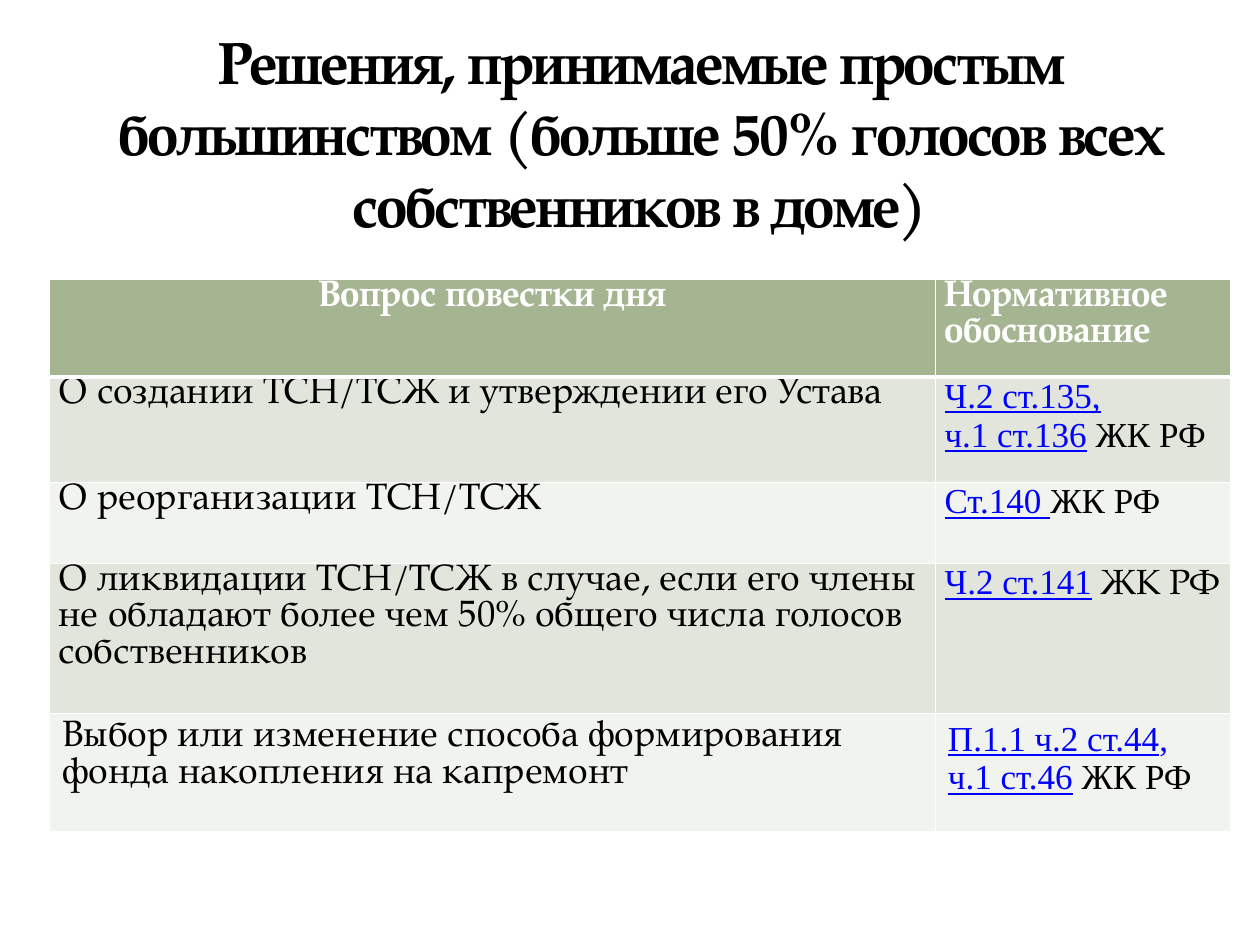
from lxml import etree
from pptx import Presentation
from pptx.dml.color import RGBColor
from pptx.enum.text import MSO_ANCHOR, MSO_AUTO_SIZE, PP_ALIGN
from pptx.oxml.ns import qn
from pptx.util import Cm, Pt

LEFT, CENTER, JUSTIFY = PP_ALIGN.LEFT, PP_ALIGN.CENTER, PP_ALIGN.JUSTIFY
BOTTOM, NO_AUTOFIT = MSO_ANCHOR.BOTTOM, MSO_AUTO_SIZE.NONE
TITLE_ONLY = 5

BLACK = RGBColor(0x00, 0x00, 0x00)
WHITE = RGBColor(0xFF, 0xFF, 0xFF)
LINK_BLUE = RGBColor(0x00, 0x00, 0xFF)
HEADER_GREEN = RGBColor(0xA5, 0xB5, 0x92)
BAND_COLORS = (RGBColor(0xE1, 0xE5, 0xDC), RGBColor(0xF0, 0xF3, 0xEE))

SERIF = "TeX Gyre Pagella"
TIMES = "Times New Roman"
TITLE = {"name": SERIF, "size": Pt(34), "bold": True, "color": BLACK}
HEADER = {"name": SERIF, "size": Pt(21), "bold": True, "color": WHITE}
QUESTION = {"name": SERIF, "size": Pt(21), "bold": False, "color": BLACK}
LAW = {"name": TIMES, "size": Pt(20), "bold": False, "color": BLACK}
LAW_SERIF = {**LAW, "name": SERIF}
LINK = {**LAW, "color": LINK_BLUE, "underline": True}
LINK_COMMA = {**LINK, "underline": False}

TIGHT = {"margin_left": Cm(0.18), "margin_right": Cm(0.18),
         "margin_top": Cm(0), "margin_bottom": Cm(0)}
ROOMY = {"margin_left": Cm(0.25), "margin_right": Cm(0.25),
         "margin_top": Cm(0.13), "margin_bottom": Cm(0.13)}

HEADINGS = [("Вопрос повестки дня", CENTER), ("Нормативное обоснование", JUSTIFY)]
DECISIONS = [
    ("О создании ТСН/ТСЖ и утверждении его Устава",
     [[("Ч.2 ст.135,", LINK)], [("ч.1 ст.136", LINK), (" ЖК РФ", LAW)]], TIGHT),
    ("О реорганизации ТСН/ТСЖ",
     [[("Ст.140 ", LINK), ("ЖК РФ", LAW)]], TIGHT),
    ("О ликвидации ТСН/ТСЖ в случае, если его члены не обладают более чем 50% "
     "общего числа голосов собственников",
     [[("Ч.2 ст.141", LINK), (" ЖК РФ", LAW_SERIF)]], TIGHT),
    ("Выбор или изменение способа формирования фонда накопления на капремонт",
     [[("П.1.1 ч.2 ст.44", LINK), (",", LINK_COMMA)],
      [("ч.1 ст.46", LINK), (" ЖК РФ", LAW)]], ROOMY),
]
COLUMN_WIDTHS = (17.86, 5.95)
ROW_HEIGHTS = (1.98, 2.13, 1.63, 3.02, 2.39)


class SlideBuilder:
    def __init__(self, presentation):
        self.slide = presentation.slides.add_slide(presentation.slide_layouts[TITLE_ONLY])

    def set_values(self, target, values):
        for name, value in values.items():
            setattr(target, name, value)

    def add_run(self, paragraph, text, style):
        run = paragraph.add_run()
        run.text = text
        self.set_values(run.font, {k: v for k, v in style.items() if k != "color"})
        run.font.color.rgb = style["color"]
        return run

    def add_title(self, text, position):
        title = self.slide.shapes.title
        self.set_values(title, position)
        self.set_values(title.text_frame, {"vertical_anchor": BOTTOM, "word_wrap": True,
                                           "auto_size": NO_AUTOFIT})
        paragraph = title.text_frame.paragraphs[0]
        paragraph.alignment = CENTER
        run = self.add_run(paragraph, text, TITLE)
        run.font._element.set("spc", "-100")

    def add_table(self, left, top):
        shape = self.slide.shapes.add_table(
            len(ROW_HEIGHTS), len(COLUMN_WIDTHS), left, top,
            Cm(sum(COLUMN_WIDTHS)), Cm(sum(ROW_HEIGHTS)))
        table = shape.table
        for column, width in zip(table.columns, COLUMN_WIDTHS):
            column.width = Cm(width)
        for row, height in zip(table.rows, ROW_HEIGHTS):
            row.height = Cm(height)
        return table

    def add_borders(self, cell, widths):
        properties = cell._tc.get_or_add_tcPr()
        for side, width in zip("LRTB", widths):
            line = etree.SubElement(properties, qn(f"a:ln{side}"), w=str(Pt(width)))
            fill = etree.SubElement(line, qn("a:solidFill"))
            etree.SubElement(fill, qn("a:srgbClr"), val=str(WHITE))

    def fill_cell(self, cell, paragraphs, color, margins, borders=(1, 1, 1, 1),
                  alignment=LEFT, line_spacing=None):
        self.set_values(cell, margins)
        self.add_borders(cell, borders)
        cell.fill.solid()
        cell.fill.fore_color.rgb = color
        for index, runs in enumerate(paragraphs):
            frame = cell.text_frame
            paragraph = frame.add_paragraph() if index else frame.paragraphs[0]
            self.set_values(paragraph, {"alignment": alignment, "line_spacing": line_spacing})
            for text, style in runs:
                self.add_run(paragraph, text, style)


def main():
    presentation = Presentation()
    presentation.slide_width, presentation.slide_height = Cm(25.4), Cm(19.05)
    builder = SlideBuilder(presentation)
    builder.add_title(
        "Решения, принимаемые простым большинством (больше 50% голосов всех "
        "собственников в доме)",
        {"left": Cm(1), "top": Cm(0.58), "width": Cm(23.82), "height": Cm(4.37)})
    table = builder.add_table(Cm(1), Cm(5.62))
    for column, (heading, alignment) in enumerate(HEADINGS):
        builder.fill_cell(table.cell(0, column), [[(heading, HEADER)]], HEADER_GREEN, TIGHT,
                          (1, 1, 1, 3), alignment, Pt(21))
    for row, (question, law, margins) in enumerate(DECISIONS, 1):
        color = BAND_COLORS[(row - 1) % 2]
        borders = (1, 1, 3 if row == 1 else 1, 1)
        builder.fill_cell(table.cell(row, 0), [[(question, QUESTION)]], color, margins,
                          borders, line_spacing=Pt(21))
        builder.fill_cell(table.cell(row, 1), law, color, margins, borders)
    presentation.save("out.pptx")


if __name__ == "__main__":
    main()
